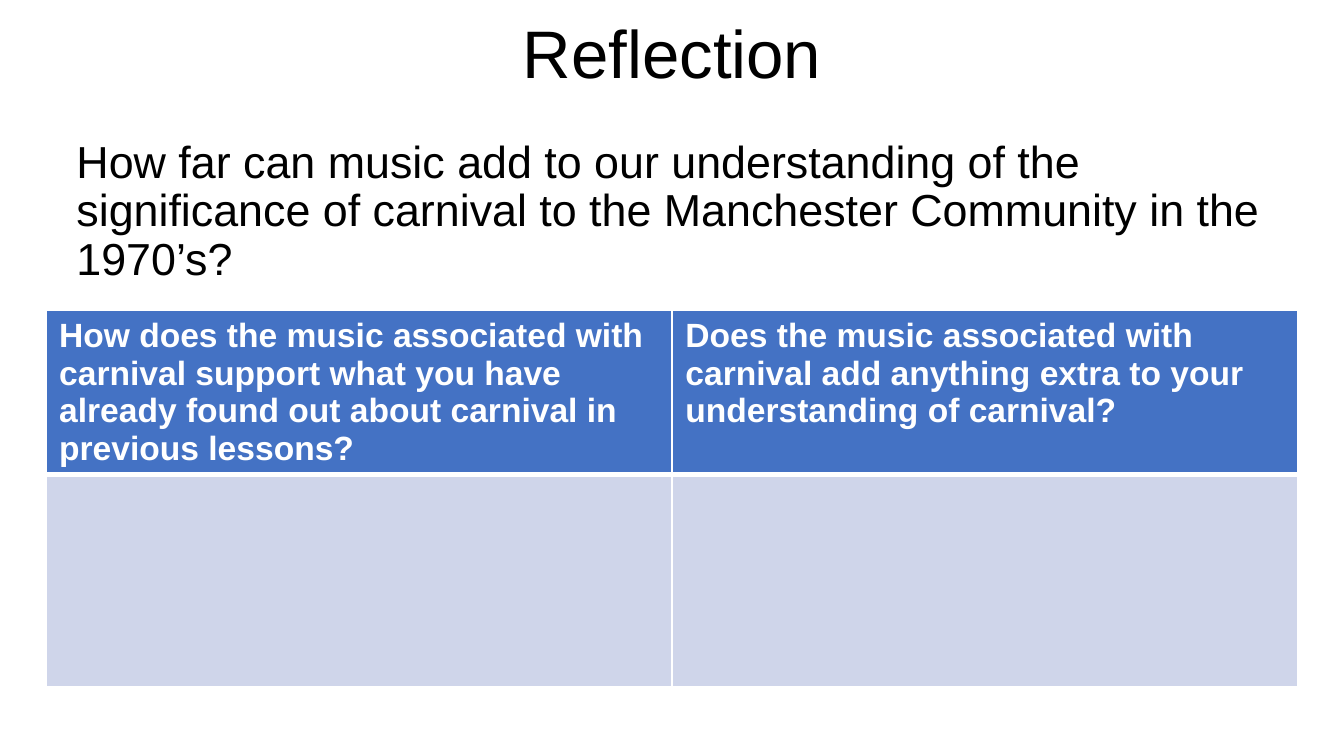
from pptx import Presentation
from pptx.dml.color import RGBColor
from pptx.enum import text
from pptx.oxml import parse_xml
from pptx.oxml.ns import nsdecls
from pptx.util import Inches, Pt


def color(value):
    return RGBColor.from_string(value)


def write(frame, words, size, ink, bold=False):
    para = frame.paragraphs[0]
    span = para.add_run()
    span.text = words
    span.font.name = "Arial"
    span.font.size = Pt(size)
    span.font.bold = bold
    span.font.color.rgb = color(ink)
    return para


# Widescreen 16:9 page
deck = Presentation()
deck.slide_width = Inches(10)
deck.slide_height = Inches(10 * 9 / 16)
page = deck.slides.add_slide(deck.slide_layouts[5])
left, width = Inches(0.34), Inches(9.32)

# Title and question
title = page.shapes.title
title.left, title.top, title.width, title.height = left, Inches(0.05), width, Inches(0.63)
question = page.shapes.add_textbox(left, Inches(0.94), width, Inches(3.74))
for box, words, size, align in (
    (title, "Reflection", 36, text.PP_ALIGN.CENTER),
    (question, "How far can music add to our understanding of the significance of "
     "carnival to the Manchester Community in the 1970’s?", 24, text.PP_ALIGN.LEFT),
):
    frame = box.text_frame
    frame.word_wrap = True
    frame.auto_size = text.MSO_AUTO_SIZE.NONE
    frame.vertical_anchor = text.MSO_ANCHOR.TOP
    frame.margin_left = frame.margin_right = Inches(0.1)
    frame.margin_top = frame.margin_bottom = Inches(0.1)
    para = write(frame, words, size, "000000")
    para.alignment = align
    para.line_spacing = 0.9
    para.space_before = Pt(0)
question.text_frame.paragraphs[0]._p.get_or_add_pPr().set("marL", str(Inches(0.13)))

# Reflection table: prompts above empty answer cells
prompts = (
    "How does the music associated with carnival support what you have already "
    "found out about carnival in previous lessons?",
    "Does the music associated with carnival add anything extra to your "
    "understanding of carnival?",
)
row_heights = (1.22, 1.58)
table = page.shapes.add_table(
    2, 2, left, Inches(2.31), width, Inches(sum(row_heights))).table
for row, height in zip(table.rows, row_heights):
    row.height = Inches(height)

# Fills and white borders, with a thicker line under the header
row_styles = (("4472C4", {"lnB": 3}), ("CFD5EA", {"lnT": 3}))
for row, (fill, thick) in zip(table.rows, row_styles):
    for cell in row.cells:
        properties = cell._tc.get_or_add_tcPr()
        for side in ("lnL", "lnR", "lnT", "lnB"):
            properties.append(parse_xml(
                f'<a:{side} {nsdecls("a")} w="{Pt(thick.get(side, 1))}"><a:solidFill>'
                f'<a:srgbClr val="FFFFFF"/></a:solidFill></a:{side}>'))
        cell.fill.solid()
        cell.fill.fore_color.rgb = color(fill)
for column, prompt in enumerate(prompts):
    write(table.cell(0, column).text_frame, prompt, 18, "FFFFFF", bold=True)

deck.save("out.pptx")
